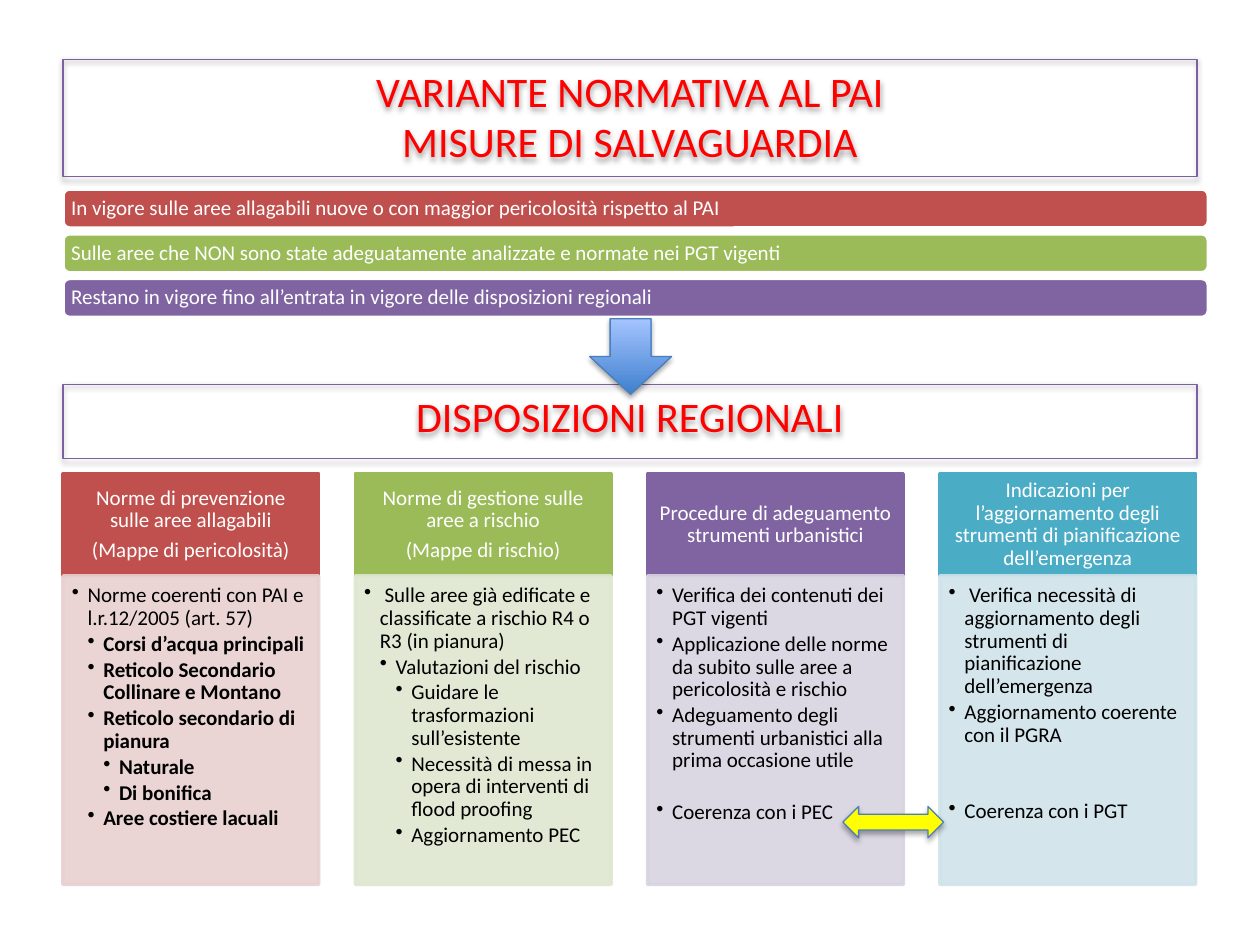
from dataclasses import dataclass

from lxml.etree import SubElement
from pptx import Presentation
from pptx.dml.color import RGBColor
from pptx.enum.shapes import MSO_SHAPE
from pptx.enum.text import MSO_ANCHOR, PP_ALIGN
from pptx.oxml.ns import qn
from pptx.shapes.autoshape import Shape
from pptx.slide import Slide
from pptx.text.text import _Paragraph
from pptx.util import Inches, Pt

WHITE = RGBColor(0xFF, 0xFF, 0xFF)
BLACK = RGBColor(0x00, 0x00, 0x00)
HEADING_RED = RGBColor(0xFF, 0x00, 0x00)
HEADING_BORDER = RGBColor(0x7D, 0x60, 0xA0)
RED = RGBColor(0xC0, 0x50, 0x4D)
GREEN = RGBColor(0x9B, 0xBB, 0x59)
PURPLE = RGBColor(0x80, 0x64, 0xA2)
TEAL = RGBColor(0x4B, 0xAC, 0xC6)
PALE_RED = RGBColor(0xE8, 0xD0, 0xD0)
PALE_GREEN = RGBColor(0xDE, 0xE7, 0xD1)
PALE_PURPLE = RGBColor(0xD8, 0xD3, 0xE0)
PALE_TEAL = RGBColor(0xD0, 0xE3, 0xEA)
YELLOW = RGBColor(0xFF, 0xFF, 0x00)
ARROW_BORDER = RGBColor(0x4B, 0x7E, 0xBC)
ARROW_DARK = RGBColor(0x3F, 0x80, 0xCE)
ARROW_LIGHT = RGBColor(0xA4, 0xC4, 0xFF)

LEFT = 0.5
COLUMN_WIDTH, COLUMN_PITCH = 2.03, 2.32
HEADER_TOP, HEADER_HEIGHT, BODY_HEIGHT = 3.76, 0.81, 2.45
BAR_TOP, BAR_PITCH = 1.5, 0.355


@dataclass
class Point:
    text: str
    level: int = 0
    bold: bool = False
    gap_before: float = 0


@dataclass
class Column:
    color: RGBColor
    pale: RGBColor
    header: list[str]
    points: list[Point]


BARS = [
    (RED, "In vigore sulle aree allagabili nuove o con maggior pericolosità rispetto al PAI"),
    (GREEN, "Sulle aree che NON sono state adeguatamente analizzate e normate nei PGT vigenti"),
    (PURPLE, "Restano in vigore fino all’entrata in vigore delle disposizioni regionali"),
]

COLUMNS = [
    Column(RED, PALE_RED,
           ["Norme di prevenzione sulle aree allagabili", "(Mappe di pericolosità)"],
           [Point("Norme coerenti con PAI e l.r.12/2005 (art. 57)"),
            Point("Corsi d’acqua principali", 1, True),
            Point("Reticolo Secondario Collinare e Montano", 1, True),
            Point("Reticolo secondario di pianura", 1, True),
            Point("Naturale", 2, True),
            Point("Di bonifica", 2, True),
            Point("Aree costiere lacuali", 1, True)]),
    Column(GREEN, PALE_GREEN,
           ["Norme di gestione sulle aree a rischio", "(Mappe di rischio)"],
           [Point(" Sulle aree già edificate e classificate a rischio R4 o R3 (in pianura)"),
            Point("Valutazioni del rischio", 1),
            Point("Guidare le trasformazioni sull’esistente", 2),
            Point("Necessità di messa in opera di interventi di flood proofing", 2),
            Point("Aggiornamento PEC", 2)]),
    Column(PURPLE, PALE_PURPLE,
           ["Procedure di adeguamento strumenti urbanistici"],
           [Point("Verifica dei contenuti dei PGT vigenti"),
            Point("Applicazione delle norme da subito sulle aree a pericolosità e rischio"),
            Point("Adeguamento degli strumenti urbanistici alla prima occasione utile"),
            Point("Coerenza con i PEC", gap_before=14.5)]),
    Column(TEAL, PALE_TEAL,
           ["Indicazioni per l’aggiornamento degli strumenti di pianificazione dell’emergenza"],
           [Point(" Verifica necessità di aggiornamento degli strumenti di pianificazione dell’emergenza"),
            Point("Aggiornamento coerente con il PGRA"),
            Point("Coerenza con i PGT", gap_before=29)]),
]


def add_block(slide: Slide, kind: MSO_SHAPE, left: float, top: float, width: float,
              height: float, fill: RGBColor | None, line: RGBColor,
              line_width: float) -> Shape:
    block = slide.shapes.add_shape(kind, Inches(left), Inches(top), Inches(width), Inches(height))
    block.shadow.inherit = False
    if fill is None:
        block.fill.background()
    else:
        block.fill.solid()
        block.fill.fore_color.rgb = fill
    block.line.color.rgb = line
    block.line.width = Pt(line_width)
    return block


def add_shadow(block: Shape, opacity: int, distance: float) -> None:
    effects = block._element.spPr.find(qn("a:effectLst"))
    shadow = SubElement(effects, qn("a:outerShdw"), blurRad=str(Pt(3.1)),
                        dist=str(Pt(distance)), dir="5400000", rotWithShape="0")
    color = SubElement(shadow, qn("a:srgbClr"), val="000000")
    SubElement(color, qn("a:alpha"), val=str(opacity * 1000))


def make_translucent(block: Shape, opacity: int) -> None:
    for color in block._element.spPr.iter(qn("a:srgbClr")):
        SubElement(color, qn("a:alpha"), val=str(opacity * 1000))


def set_frame(block: Shape, anchor: MSO_ANCHOR, left: float, top: float,
              right: float, bottom: float) -> None:
    frame = block.text_frame
    frame.word_wrap = True
    frame.vertical_anchor = anchor
    frame.margin_left, frame.margin_top = Inches(left), Inches(top)
    frame.margin_right, frame.margin_bottom = Inches(right), Inches(bottom)


def add_paragraph(block: Shape, index: int, text: str, align: PP_ALIGN) -> _Paragraph:
    frame = block.text_frame
    paragraph = frame.add_paragraph() if index else frame.paragraphs[0]
    paragraph.text = text
    paragraph.alignment = align
    return paragraph


def set_font(paragraph: _Paragraph, size: float, color: RGBColor, bold: bool = False) -> None:
    font = paragraph.font
    font.name, font.size, font.bold = "Calibri", Pt(size), bold
    font.color.rgb = color


def add_labels(block: Shape, texts: list[str], align: PP_ALIGN) -> None:
    for index, text in enumerate(texts):
        paragraph = add_paragraph(block, index, text, align)
        paragraph.line_spacing = 0.9
        paragraph.space_after = Pt(4.2)
        set_font(paragraph, 12, WHITE)


def add_heading(slide: Slide, top: float, height: float, text: str) -> None:
    heading = add_block(slide, MSO_SHAPE.RECTANGLE, LEFT, top, 9, height, None,
                        HEADING_BORDER, 0.75)
    add_shadow(heading, 38, 1.6)
    set_frame(heading, MSO_ANCHOR.TOP, 0.1, 0.05, 0.1, 0.05)
    set_font(add_paragraph(heading, 0, text, PP_ALIGN.CENTER), 24, HEADING_RED)


def add_points(body: Shape, points: list[Point]) -> None:
    for index, point in enumerate(points):
        paragraph = add_paragraph(body, index, point.text, PP_ALIGN.LEFT)
        paragraph.level = point.level
        paragraph.line_spacing = 0.9
        paragraph.space_after = Pt(1.8)
        if point.gap_before:
            paragraph.space_before = Pt(point.gap_before)
        properties = paragraph._p.get_or_add_pPr()
        properties.set("marL", str(Inches(0.125 * (point.level + 1))))
        properties.set("indent", str(Inches(-0.125)))
        SubElement(properties, qn("a:buChar"), char="•")
        set_font(paragraph, 12, BLACK, point.bold)


def add_column(slide: Slide, left: float, column: Column) -> None:
    header = add_block(slide, MSO_SHAPE.RECTANGLE, left, HEADER_TOP, COLUMN_WIDTH,
                       HEADER_HEIGHT, column.color, column.color, 2)
    set_frame(header, MSO_ANCHOR.MIDDLE, 0.09, 0.05, 0.09, 0.05)
    add_labels(header, column.header, PP_ALIGN.CENTER)
    body = add_block(slide, MSO_SHAPE.RECTANGLE, left, HEADER_TOP + HEADER_HEIGHT,
                     COLUMN_WIDTH, BODY_HEIGHT, column.pale, column.pale, 2)
    make_translucent(body, 90)
    set_frame(body, MSO_ANCHOR.TOP, 0.07, 0.07, 0.09, 0.1)
    add_points(body, column.points)


def main() -> None:
    deck = Presentation()
    deck.slide_width, deck.slide_height = Inches(10), Inches(7.5)
    slide = deck.slides.add_slide(deck.slide_layouts[6])

    # Safeguard measures
    add_heading(slide, 0.47, 0.93, "VARIANTE NORMATIVA AL PAI\vMISURE DI SALVAGUARDIA")
    for row, (color, text) in enumerate(BARS):
        bar = add_block(slide, MSO_SHAPE.ROUNDED_RECTANGLE, LEFT, BAR_TOP + row * BAR_PITCH,
                        9.09, 0.31, color, WHITE, 2)
        set_frame(bar, MSO_ANCHOR.MIDDLE, 0.05, 0.05, 0.05, 0.05)
        add_labels(bar, [text], PP_ALIGN.LEFT)

    # Regional provisions
    add_heading(slide, 3.05, 0.59, "DISPOSIZIONI REGIONALI")
    for position, column in enumerate(COLUMNS):
        add_column(slide, LEFT + position * COLUMN_PITCH, column)

    # Arrows between plans and between the two parts
    plans_arrow = add_block(slide, MSO_SHAPE.LEFT_RIGHT_ARROW, 6.69, 6.4, 0.8, 0.25,
                            YELLOW, ARROW_BORDER, 0.75)
    add_shadow(plans_arrow, 35, 1.8)
    down_arrow = add_block(slide, MSO_SHAPE.DOWN_ARROW, 4.68, 2.53, 0.65, 0.6,
                           ARROW_DARK, ARROW_BORDER, 0.75)
    add_shadow(down_arrow, 35, 1.8)
    down_arrow.fill.gradient()
    down_arrow.fill.gradient_angle = 90
    for stop, color in zip(down_arrow.fill.gradient_stops, (ARROW_DARK, ARROW_LIGHT)):
        stop.color.rgb = color

    deck.save("out.pptx")


if __name__ == "__main__":
    main()
